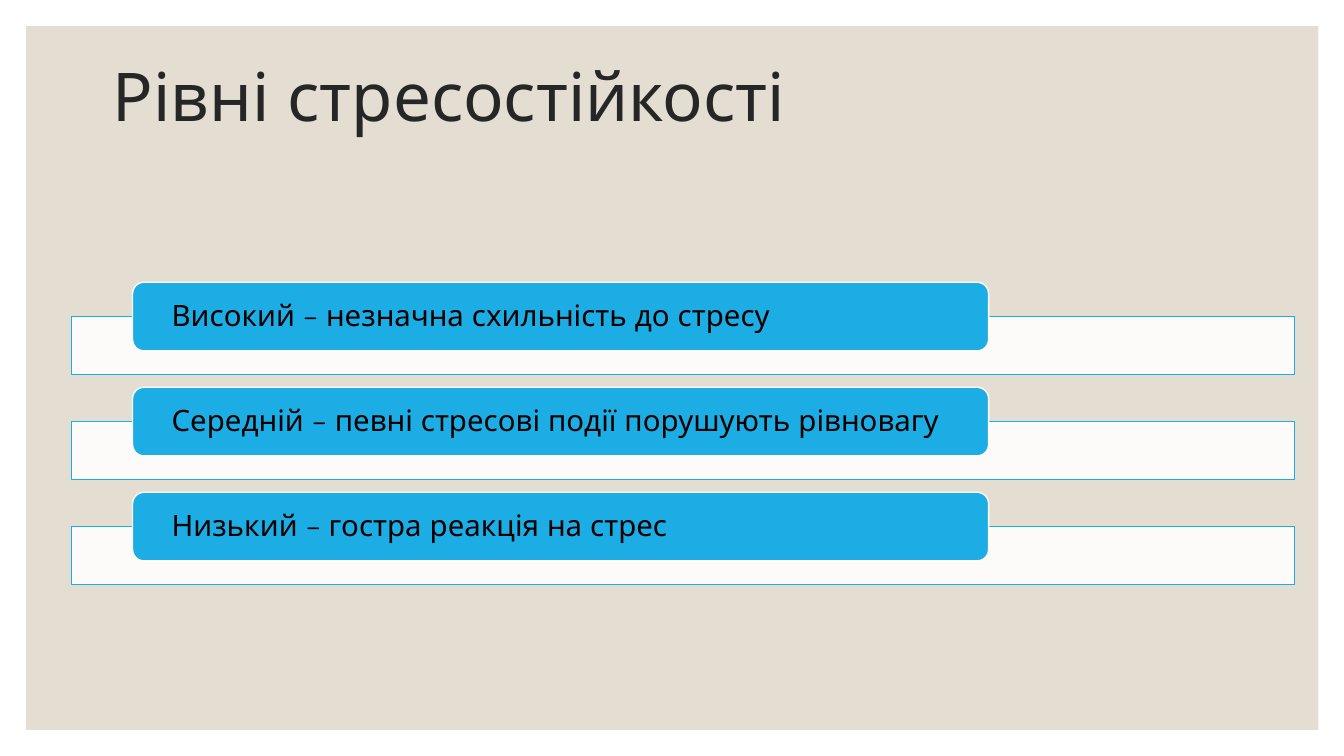
from lxml.etree import SubElement
from pptx import Presentation
from pptx.dml.color import RGBColor
from pptx.enum.shapes import MSO_SHAPE
from pptx.enum.text import MSO_ANCHOR, MSO_AUTO_SIZE, PP_ALIGN
from pptx.oxml.ns import qn
from pptx.util import Pt

FONT = "Quicksand"
SAND, WHITE, BLUE, BLACK, CHARCOAL = "E3DED1", "FFFFFF", "1CADE4", "000000", "262626"
LEVELS = [
    "Високий – незначна схильність до стресу",
    "Середній – певні стресові події порушують рівновагу",
    "Низький – гостра реакція на стрес",
]
FIRST_LABEL_TOP = 201.6
LEVEL_PITCH = 75
BAR_OFFSET = 24.3


def color(hex_code):
    return RGBColor.from_string(hex_code)


def add_box(slide, kind, left, top, width, height, fill, line=None):
    box = slide.shapes.add_shape(kind, Pt(left), Pt(top), Pt(width), Pt(height))
    box.shadow.inherit = False
    box.fill.solid()
    box.fill.fore_color.rgb = color(fill)
    if line:
        box.line.color.rgb = color(line)
        box.line.width = Pt(1)
    else:
        box.line.fill.background()
    return box


def set_opacity(box, percent):
    fill_color = box.fill._xPr.find(qn("a:solidFill"))[0]
    SubElement(fill_color, qn("a:alpha"), val=str(percent * 1000))


def write_text(shape, text, size, text_color):
    frame = shape.text_frame
    frame.text = text
    frame.word_wrap = True
    frame.auto_size = MSO_AUTO_SIZE.NONE
    frame.vertical_anchor = MSO_ANCHOR.MIDDLE
    paragraph = frame.paragraphs[0]
    paragraph.alignment = PP_ALIGN.LEFT
    paragraph.line_spacing = 0.9
    paragraph.font.name = FONT
    paragraph.font.size = Pt(size)
    paragraph.font.color.rgb = color(text_color)


def add_panel(slide):
    """Sand-coloured panel behind everything else."""
    panel = add_box(slide, MSO_SHAPE.RECTANGLE, 18.7, 18.7, 923, 502.6, SAND)
    slide.shapes._spTree.insert(2, panel._element)


def add_title(slide, text):
    title = slide.shapes.title
    title.left, title.top, title.width, title.height = Pt(73.4), Pt(17.3), Pt(792), Pt(108)
    write_text(title, text, 48, CHARCOAL)


def add_level(slide, text, top):
    """White bar with a blue label overlapping its upper edge."""
    bar = add_box(slide, MSO_SHAPE.RECTANGLE, 51, top + BAR_OFFSET, 873.6, 41.8, WHITE, BLUE)
    set_opacity(bar, 90)
    label = add_box(slide, MSO_SHAPE.ROUNDED_RECTANGLE, 94.7, top, 611.5, 49, BLUE, WHITE)
    frame = label.text_frame
    frame.margin_left = frame.margin_right = Pt(25.5)
    frame.margin_top = frame.margin_bottom = Pt(0)
    write_text(label, text, 21, BLACK)


def main():
    presentation = Presentation()
    presentation.slide_width, presentation.slide_height = Pt(960), Pt(540)
    slide = presentation.slides.add_slide(presentation.slide_layouts[5])
    add_panel(slide)
    add_title(slide, "Рівні стресостійкості")
    for index, level in enumerate(LEVELS):
        add_level(slide, level, FIRST_LABEL_TOP + index * LEVEL_PITCH)
    presentation.save("out.pptx")


if __name__ == "__main__":
    main()
